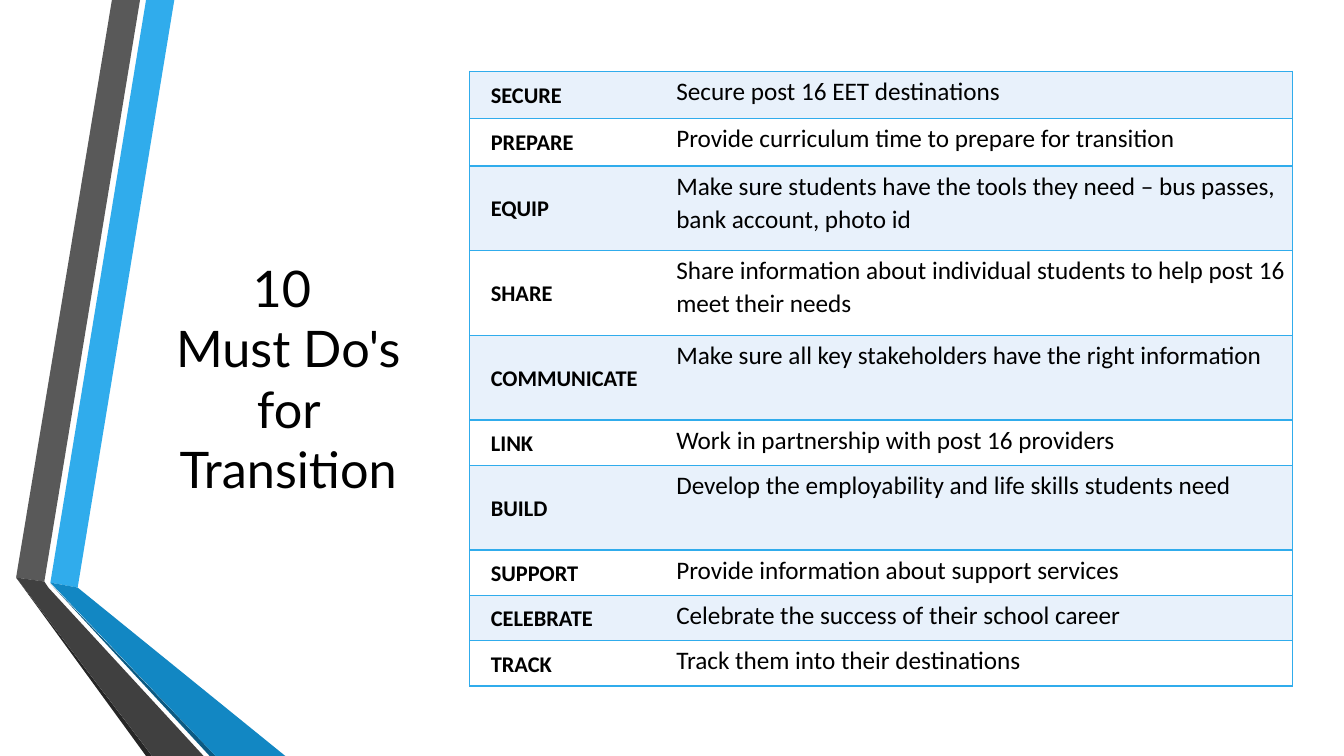
"""Build the "10 Must Do's for Transition" slide."""
from lxml.etree import SubElement
from pptx import Presentation
from pptx.dml.color import RGBColor
from pptx.enum.text import MSO_ANCHOR, MSO_AUTO_SIZE, PP_ALIGN
from pptx.oxml.ns import qn
from pptx.util import Inches, Pt

THEME = {
    "text": "000000", "sky": "30ACEC", "blue": "1287C3", "navy": "0C5A82",
    "grey": "595959", "charcoal": "404040", "black": "262626",
    "band": "E8F1FB", "plain": "FFFFFF",
    "title_font": "Lato", "table_font": "Calibri",
    "title_size": 36, "keyword_size": 16, "action_size": 18, "border": 1,
}


def write(frame, text, font, size, bold=False, align=PP_ALIGN.LEFT, spacing=1.0, after=0):
    paragraph = frame.paragraphs[0]
    paragraph.text = text
    paragraph.alignment = align
    paragraph.line_spacing = spacing
    paragraph.space_after = Pt(after)
    for line_break in paragraph._p.findall(qn("a:br")):
        SubElement(line_break, qn("a:rPr"), sz=str(size * 100))
    for run in paragraph.runs:
        run.font.name = font
        run.font.size = Pt(size)
        run.font.bold = bold
        run.font.color.rgb = RGBColor.from_string(THEME["text"])


def draw_border(cell, side, color=None):
    line = SubElement(cell._tc.get_or_add_tcPr(), qn(f"a:ln{side}"), w=str(Pt(THEME["border"])))
    if color is None:
        SubElement(line, qn("a:noFill"))
    else:
        SubElement(SubElement(line, qn("a:solidFill")), qn("a:srgbClr"), val=color)


deck = Presentation()
deck.slide_width = Inches(13.33)
deck.slide_height = Inches(7.5)
col = deck.slide_width / 100
row = deck.slide_height / 100
slide = deck.slides.add_slide(deck.slide_layouts[5])

ribbons = [
    ("sky", [(3.75, 77.07), (5.78, 77.73), (12.97, 0), (10.87, 0)]),
    ("grey", [(10.42, 0), (8.33, 0), (1.2, 76.4), (3.3, 76.93)]),
    ("black", [(1.2, 76.4), (10.87, 100), (11.32, 100)]),
    ("navy", [(3.75, 77.2), (15.6, 100), (16.05, 100)]),
    ("blue", [(3.75, 77.07), (16.05, 100), (21.23, 100), (5.78, 77.73)]),
    ("charcoal", [(15.15, 100), (3.6, 77.73), (3.3, 76.93), (1.2, 76.4), (11.32, 100)]),
]
for color, corners in ribbons:
    points = [(x * col, y * row) for x, y in corners]
    outline = slide.shapes.build_freeform(*points[0])
    outline.add_line_segments(points[1:])
    ribbon = outline.convert_to_shape()
    ribbon.fill.solid()
    ribbon.fill.fore_color.rgb = RGBColor.from_string(THEME[color])
    ribbon.line.fill.background()
    ribbon.shadow.inherit = False

heading = slide.shapes.title
heading.left, heading.top = int(9.9 * col), int(39.2 * row)
heading.width, heading.height = int(23.1 * col), int(21.6 * row)
heading.text_frame.word_wrap = True
heading.text_frame.auto_size = MSO_AUTO_SIZE.NONE
heading.text_frame.vertical_anchor = MSO_ANCHOR.MIDDLE
write(heading.text_frame, "10 \nMust Do's for Transition", THEME["title_font"],
      THEME["title_size"], align=PP_ALIGN.CENTER)

TALL, MEDIUM, SHORT = 11.2, 6.27, 6
must_dos = [
    ("SECURE", "Secure post 16 EET destinations", MEDIUM),
    ("PREPARE", "Provide curriculum time to prepare for transition", MEDIUM),
    ("EQUIP", "Make sure students have the tools they need – bus passes, "
              "bank account, photo id", TALL),
    ("SHARE", "Share information about individual students to help post 16 "
              "meet their needs", TALL),
    ("COMMUNICATE", "Make sure all key stakeholders have the right information", TALL),
    ("LINK", "Work in partnership with post 16 providers", SHORT),
    ("BUILD", "Develop the employability and life skills students need", TALL),
    ("SUPPORT", "Provide information about support services", SHORT),
    ("CELEBRATE", "Celebrate the success of their school career", SHORT),
    ("TRACK", "Track them into their destinations", SHORT),
]
column_shares = (14.85, 46.35)
checklist = slide.shapes.add_table(
    len(must_dos), len(column_shares), int(34.95 * col), int(9.43 * row),
    int(sum(column_shares) * col), int(sum(share for _, _, share in must_dos) * row)).table
checklist.first_row = False
checklist.horz_banding = False
for column, share in zip(checklist.columns, column_shares):
    column.width = int(share * col)

cell_formats = [
    {"size": THEME["keyword_size"], "bold": True},
    {"size": THEME["action_size"]},
]
cell_layouts = [
    (0.21, MSO_ANCHOR.MIDDLE, {"L": THEME["sky"], "R": None}),
    (0.07, MSO_ANCHOR.TOP, {"L": None, "R": THEME["sky"]}),
]
for index, (keyword, action, share) in enumerate(must_dos):
    checklist.rows[index].height = int(share * row)
    band = THEME["plain"] if index % 2 else THEME["band"]
    for position, text in enumerate((keyword, action)):
        cell = checklist.cell(index, position)
        indent, anchor, sides = cell_layouts[position]
        for side, color in {**sides, "T": THEME["sky"], "B": THEME["sky"]}.items():
            draw_border(cell, side, color)
        cell.fill.solid()
        cell.fill.fore_color.rgb = RGBColor.from_string(band)
        cell.vertical_anchor = anchor
        cell.margin_left, cell.margin_right = Inches(indent), Inches(0.07)
        cell.margin_top = cell.margin_bottom = Inches(0.03)
        write(cell.text_frame, text, THEME["table_font"], spacing=1.07, after=8,
              **cell_formats[position])

deck.save("out.pptx")
